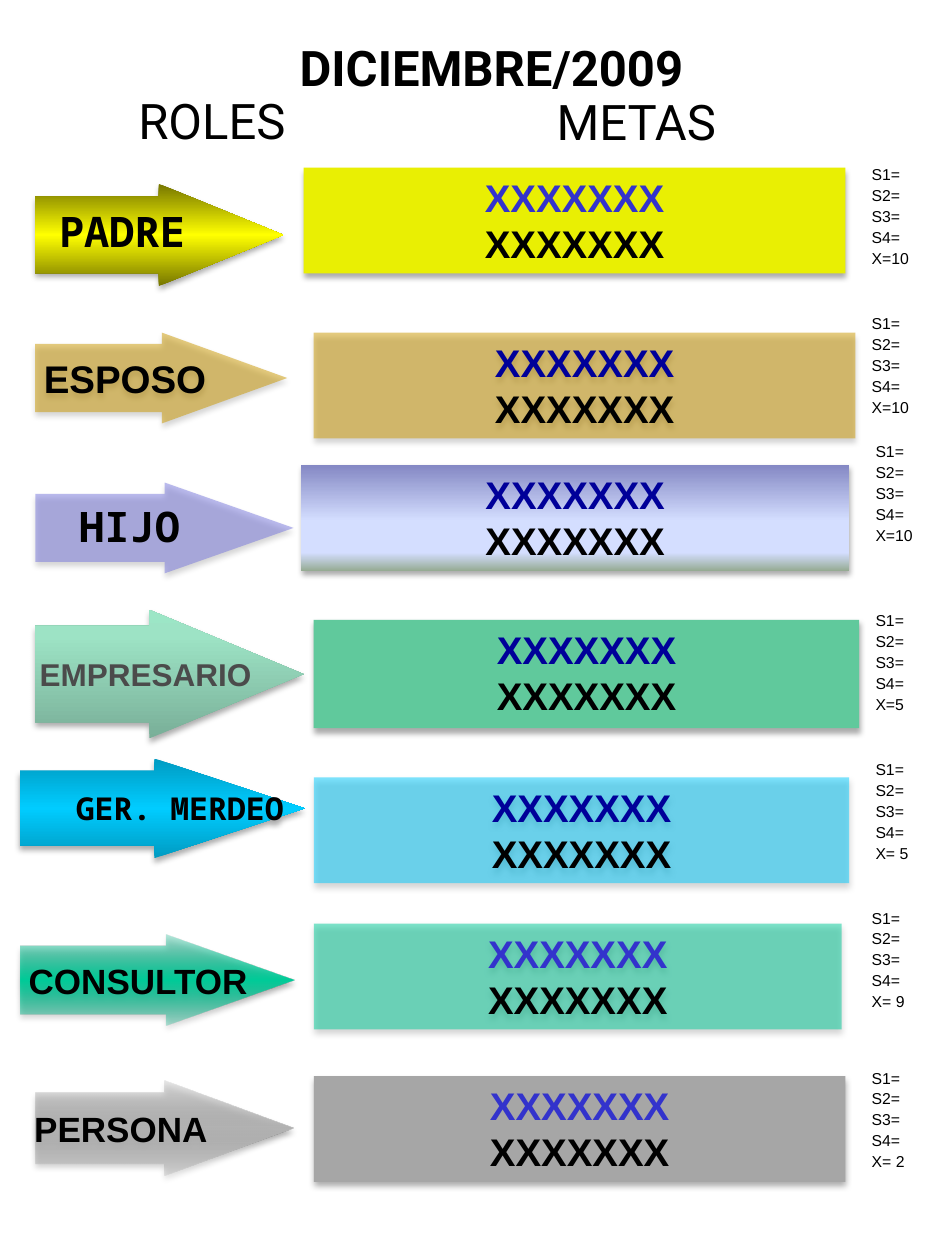
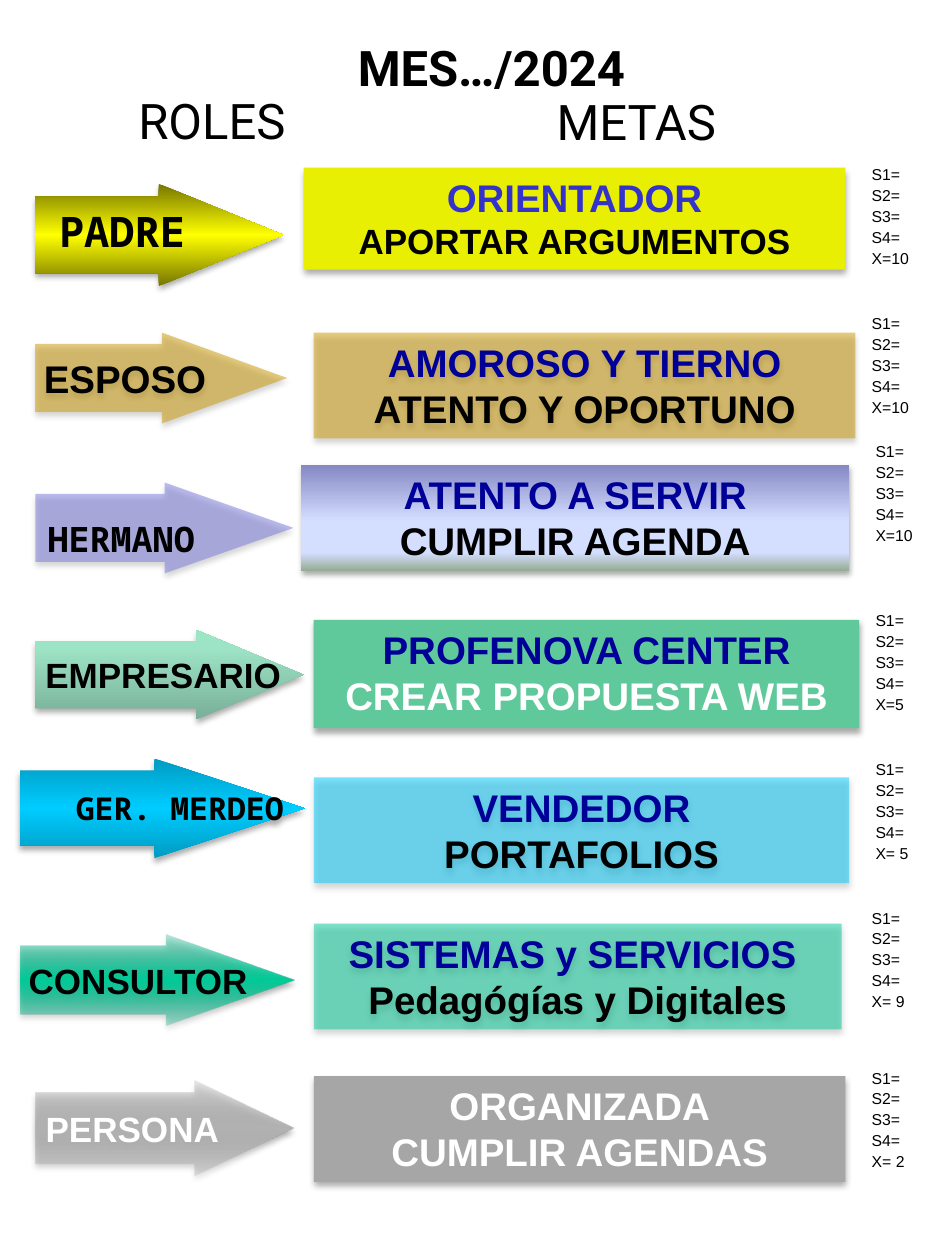
from pptx import Presentation
from pptx.dml.color import RGBColor
from pptx.enum.shapes import MSO_SHAPE
from pptx.enum.text import MSO_ANCHOR, MSO_AUTO_SIZE, PP_ALIGN
from pptx.oxml import parse_xml
from pptx.oxml.ns import nsdecls, qn
from pptx.util import Inches, Pt

BLACK = RGBColor(0x00, 0x00, 0x00)
WHITE = RGBColor(0xFF, 0xFF, 0xFF)
GRAY = RGBColor(0x4B, 0x4B, 0x4B)
NAVY = RGBColor(0x00, 0x00, 0x99)
BLUE = RGBColor(0x33, 0x33, 0xCC)
OLIVE = RGBColor(0x76, 0x76, 0x00)
YELLOW = RGBColor(0xFF, 0xFF, 0x00)
LEMON = RGBColor(0xE9, 0xEF, 0x03)
GOLD = RGBColor(0xCC, 0x99, 0x00)
VIOLET = RGBColor(0x78, 0x78, 0xDE)
DUSK = RGBColor(0x84, 0x88, 0xC4)
MIST = RGBColor(0xD4, 0xDE, 0xFF)
MOSS = RGBColor(0x96, 0xAB, 0x94)
SAGE = RGBColor(0x79, 0xAF, 0x98)
MINT = RGBColor(0x9D, 0xE3, 0xC5)
PALE = RGBColor(0x9C, 0xE6, 0xC6)
GREEN = RGBColor(0x60, 0xC9, 0x9C)
DEEP = RGBColor(0x00, 0x9B, 0xC2)
SKY = RGBColor(0x00, 0xCC, 0xFF)
PINE = RGBColor(0x00, 0xAB, 0x80)
JADE = RGBColor(0x00, 0xCC, 0x99)
STEEL = RGBColor(0xA7, 0xA7, 0xA7)
SILVER = RGBColor(0xB2, 0xB2, 0xB2)
STONE = RGBColor(0xA6, 0xA6, 0xA6)

SANS, MONO, HEAD = "Arial", "Noto Sans Mono", "Roboto"

deck = Presentation()
deck.slide_width, deck.slide_height = Inches(7.5), Inches(10)
COL, ROW = deck.slide_width / 75, deck.slide_height / 100


def paint(shape, stops, angle=90):
    parts = [
        f'<a:srgbClr val="{tone}"><a:alpha val="{alpha * 1000}"/></a:srgbClr>'
        for _, tone, alpha in stops
    ]
    if len(stops) == 1:
        fill = f'<a:solidFill {nsdecls("a")}>{parts[0]}</a:solidFill>'
    else:
        marks = "".join(
            f'<a:gs pos="{stop[0] * 1000}">{part}</a:gs>'
            for stop, part in zip(stops, parts)
        )
        fill = (
            f'<a:gradFill {nsdecls("a")} rotWithShape="1"><a:gsLst>{marks}</a:gsLst>'
            f'<a:lin ang="{angle * 60000}" scaled="0"/></a:gradFill>'
        )
    props = shape.element.spPr
    props.insert(2, parse_xml(fill))
    shape.line.fill.background()
    shape.shadow.inherit = False
    props.find(qn("a:effectLst")).append(parse_xml(
        f'<a:outerShdw {nsdecls("a")} blurRad="{Pt(3.5)}" dist="{Pt(2.2)}" dir="5400000"'
        ' rotWithShape="0"><a:srgbClr val="000000"><a:alpha val="32000"/>'
        '</a:srgbClr></a:outerShdw>'
    ))


def write(shape, lines, face, bold=True, align=PP_ALIGN.LEFT, **extra):
    frame = shape.text_frame
    look = {
        "word_wrap": True, "auto_size": MSO_AUTO_SIZE.NONE,
        "vertical_anchor": MSO_ANCHOR.TOP,
        "margin_left": int(COL), "margin_right": int(COL),
        "margin_top": int(ROW / 2), "margin_bottom": int(ROW / 2),
    }
    for key, value in (look | extra).items():
        setattr(frame, key, value)
    for spot, (text, size, ink) in enumerate(lines):
        para = frame.add_paragraph() if spot else frame.paragraphs[0]
        para.alignment = align
        run = para.add_run()
        run.text = text
        for key, value in {"name": face, "size": Pt(size), "bold": bold}.items():
            setattr(run.font, key, value)
        run.font.color.rgb = ink


ARROWS = [
    (2.8, 14.6, 19.7, 8.1, 1.22, 90, [(0, OLIVE, 100), (50, YELLOW, 100), (100, OLIVE, 100)]),
    (2.8, 26.4, 20, 7.2, 1.38, 90, [(0, GOLD, 50)]),
    (2.8, 38.3, 20.5, 7.2, 1.42, 90, [(0, VIOLET, 50)]),
    (2.8, 48.4, 21.3, 10.2, 1.2, 270, [(0, SAGE, 100), (80, MINT, 100), (100, PALE, 100)]),
    (1.6, 60.2, 22.6, 7.9, 1.51, 90, [(0, DEEP, 100), (50, SKY, 100), (100, DEEP, 100)]),
    (1.6, 74.2, 21.8, 7.2, 1.42, 90, [(0, PINE, 27), (50, JADE, 100), (100, PINE, 27)]),
    (2.8, 85.8, 20.5, 7.5, 1.37, 90, [(0, STEEL, 27), (50, SILVER, 100), (100, STEEL, 27)]),
]
BARS = [
    (24.1, 13.3, 43, 8.4, [(0, LEMON, 100)]),
    (24.9, 26.4, 43, 8.4, [(0, GOLD, 50)]),
    (23.9, 36.9, 43.5, 8.4,
     [(0, DUSK, 100), (53, MIST, 100), (83, MIST, 100), (100, MOSS, 100)]),
    (24.9, 49.2, 43.3, 8.6, [(0, GREEN, 100)]),
    (24.9, 61.7, 42.5, 8.4, [(0, SKY, 50)]),
    (24.9, 73.3, 41.9, 8.4, [(0, JADE, 50)]),
    (24.9, 85.4, 42.2, 8.4, [(0, STONE, 100)]),
]
SCORES = [
    (68.2, 13, "X=10"), (68.2, 24.8, "X=10"), (68.5, 35, "X=10"), (68.5, 48.4, "X=5"),
    (68.5, 60.2, "X= 5"), (68.2, 72, "X= 9"), (68.2, 84.7, "X= 2"),
]
PADRE = ("PADRE", 24, BLACK, MONO, (3.7, 15.8, 14.1, 5))
ESPOSO = ("ESPOSO", 22, BLACK, SANS, 1.7)
GER = ("GER. MERDEO", 18, BLACK, MONO, 11.7)
ADVISER = ("CONSULTOR", 20, BLACK, SANS, 4.6)
INKS = [BLUE, NAVY, NAVY, NAVY, NAVY, BLUE, BLUE]

MONTHS = [
    {
        "title": "DICIEMBRE/2009",
        "roles": [
            PADRE, ESPOSO, ("HIJO", 24, BLACK, MONO, (5.3, 39.2, 14.3, 5)),
            ("EMPRESARIO", 18, GRAY, SANS, 5.4), GER, ADVISER,
            ("PERSONA", 20, BLACK, SANS, 0.8),
        ],
        "goals": [[("XXXXXXX", 22, ink), ("XXXXXXX", 22, BLACK)] for ink in INKS],
        "arrows": {},
        "bars": {},
    },
    {
        "title": "MES…/2024",
        "roles": [
            PADRE, ESPOSO, ("HERMANO", 20, BLACK, MONO, (2.8, 40.6, 16.8, 4.4)),
            ("EMPRESARIO", 20, BLACK, SANS, 5.4), GER, ADVISER,
            ("PERSONA", 20, WHITE, SANS, 0.8),
        ],
        "goals": [
            [("ORIENTADOR", 22, BLUE), ("APORTAR ARGUMENTOS", 20, BLACK)],
            [("AMOROSO Y TIERNO", 22, NAVY), ("ATENTO Y OPORTUNO", 22, BLACK)],
            [("ATENTO A SERVIR", 22, NAVY), ("CUMPLIR AGENDA", 22, BLACK)],
            [("PROFENOVA CENTER", 22, NAVY), ("CREAR PROPUESTA WEB", 22, WHITE)],
            [("VENDEDOR", 22, NAVY), ("PORTAFOLIOS", 22, BLACK)],
            [("SISTEMAS y SERVICIOS ", 22, NAVY), ("Pedagógías y Digitales", 22, BLACK)],
            [("ORGANIZADA", 22, WHITE), ("CUMPLIR AGENDAS", 22, WHITE)],
        ],
        "arrows": {
            3: (2.8, 50, 21.3, 7.1, 1.2, *ARROWS[3][5:]),
            6: (2.8, 85.8, 20.5, 7.5, 1.05, *ARROWS[6][5:]),
        },
        "bars": {0: (24.1, 13.3, 43, 8.1, BARS[0][4])},
    },
]

for month in MONTHS:
    slide = deck.slides.add_slide(deck.slide_layouts[5])
    shapes = slide.shapes
    title = shapes.title
    place = {"left": 19.2 * COL, "top": 2.5 * ROW, "width": 39.6 * COL, "height": 5.7 * ROW}
    for key, value in place.items():
        setattr(title, key, int(value))
    write(title, [(month["title"], 28, BLACK)], HEAD, align=PP_ALIGN.CENTER)
    for text, x, y, w in [("ROLES", 10, 6.7, 14.3), ("METAS", 43.2, 6.8, 15.2)]:
        box = shapes.add_textbox(int(x * COL), int(y * ROW), int(w * COL), int(5.7 * ROW))
        write(box, [(text, 28, BLACK)], HEAD, False, word_wrap=False)

    for spot, (role, goal, score) in enumerate(zip(month["roles"], month["goals"], SCORES)):
        x, y, w, h, tip, angle, stops = month["arrows"].get(spot, ARROWS[spot])
        arrow = shapes.add_shape(
            MSO_SHAPE.RIGHT_ARROW, int(x * COL), int(y * ROW), int(w * COL), int(h * ROW))
        arrow.adjustments[0], arrow.adjustments[1] = 0.75, tip
        paint(arrow, stops, angle)
        text, size, ink, face, inset = role
        if isinstance(inset, tuple):
            x, y, w, h = inset
            label = shapes.add_textbox(int(x * COL), int(y * ROW), int(w * COL), int(h * ROW))
            write(label, [(text, size, ink)], face)
        else:
            write(arrow, [(text, size, ink)], face, align=PP_ALIGN.CENTER, word_wrap=False,
                  vertical_anchor=MSO_ANCHOR.MIDDLE, margin_left=int(inset * COL),
                  margin_right=0, margin_top=0, margin_bottom=0)

        x, y, w, h, stops = month["bars"].get(spot, BARS[spot])
        bar = shapes.add_shape(
            MSO_SHAPE.RECTANGLE, int(x * COL), int(y * ROW), int(w * COL), int(h * ROW))
        paint(bar, stops)
        write(bar, goal, SANS, align=PP_ALIGN.CENTER)

        x, y, total = score
        box = shapes.add_textbox(int(x * COL), int(y * ROW), int(5.2 * COL), int(9.2 * ROW))
        marks = [f"S{week}=" for week in range(1, 5)] + [total]
        write(box, [(mark, 9, BLACK) for mark in marks], SANS, False, margin_right=0)
        for rank, para in enumerate(box.text_frame.paragraphs):
            para.line_spacing = 0.7
            para.space_before = Pt(4.4 if rank else 0)

deck.save("out.pptx")
